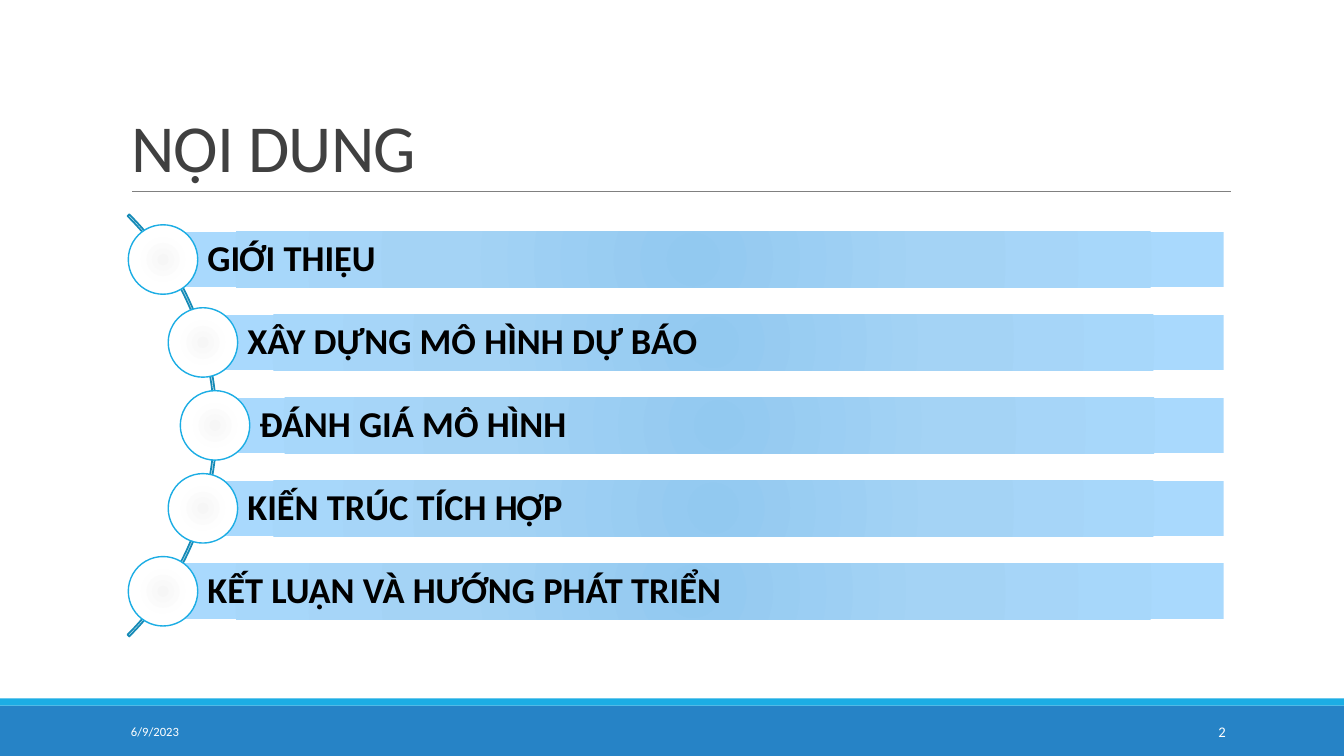
from math import sqrt
from pptx import Presentation
from pptx import util as u
from pptx.dml.color import RGBColor
from pptx.enum import shapes, text
from pptx.oxml import parse_xml

# Content
TITLE = "NỘI DUNG"
ITEMS = [
    "GIỚI THIỆU",
    "XÂY DỰNG MÔ HÌNH DỰ BÁO",
    "ĐÁNH GIÁ MÔ HÌNH",
    "KIẾN TRÚC TÍCH HỢP",
    "KẾT LUẬN VÀ HƯỚNG PHÁT TRIỂN",
]
DATE, PAGE = "6/9/2023", "2"

# Colours and measures in cm
FONT = "Calibri"
BAR = [(0, "92C9F0"), (45, "A4D3F5"), (100, "A9D9FD")]
DOT = [(0, "F6F6F6"), (45, "FEFEFE"), (100, "FFFFFF")]
WIDE, HIGH = 33.87, 19.05
MID_X, MID_Y = 5.42, 10.72      # centre of the middle dot
STEP, BEND = 2.09, 7.32         # row pitch, radius the dots follow
BAR_H, BAR_END, DOT_D = 1.4, 30.84, 1.75
ARC_D = 15.04

NS = 'xmlns:a="http://schemas.openxmlformats.org/drawingml/2006/main"'
KIND = shapes.MSO_SHAPE
ALIGN, ANCHOR = text.PP_ALIGN, text.MSO_ANCHOR


def color(code):
    return RGBColor.from_string(code)


def box(x, y, w, h):
    return [u.Cm(v) for v in (x, y, w, h)]


def glow(shape, stops):
    """Fill a shape with a gradient that spreads from its centre."""
    marks = "".join(f'<a:gs pos="{pos * 1000}"><a:srgbClr val="{code}"/></a:gs>'
                    for pos, code in stops)
    fill = parse_xml(
        f'<a:gradFill {NS} rotWithShape="1"><a:gsLst>{marks}</a:gsLst>'
        '<a:path path="circle"><a:fillToRect l="100000" t="100000" '
        'r="100000" b="100000"/></a:path></a:gradFill>')
    shape._element.spPr.prstGeom.addnext(fill)


def draw(slide, kind, area, fill=None, line=None, width=1):
    shape = slide.shapes.add_shape(kind, *box(*area))
    shape.shadow.inherit = False
    if isinstance(fill, list):
        glow(shape, fill)
    elif fill:
        shape.fill.solid()
        shape.fill.fore_color.rgb = color(fill)
    else:
        shape.fill.background()
    if line:
        shape.line.color.rgb = color(line)
        shape.line.width = u.Pt(width)
    else:
        shape.line.fill.background()
    return shape


def write(shape, words, size, code, bold=False, align=ALIGN.LEFT,
          anchor=ANCHOR.MIDDLE, lead=1.0):
    frame = shape.text_frame
    frame.text = words
    frame.word_wrap = True
    frame.auto_size = text.MSO_AUTO_SIZE.NONE
    frame.vertical_anchor = anchor
    para = frame.paragraphs[0]
    para.alignment, para.line_spacing = align, lead
    font = para.runs[0].font
    font.name, font.size, font.bold = FONT, u.Pt(size), bold
    font.color.rgb = color(code)
    return para.runs[0]


def frame_slide(slide):
    # Bottom bands
    draw(slide, KIND.RECTANGLE, (0, 17.78, WIDE, 1.27), "2683C6")
    draw(slide, KIND.RECTANGLE, (0, 17.6, WIDE, 0.18), "1CADE4")

    # Title and rule
    title = slide.shapes.title
    title.left, title.top, title.width, title.height = box(3.05, 0.79, 27.94, 4.04)
    run = write(title, TITLE, 48, "404040", anchor=ANCHOR.BOTTOM, lead=0.85)
    run.font._element.set("spc", "-50")
    rule = slide.shapes.add_connector(shapes.MSO_CONNECTOR.STRAIGHT,
                                      *box(3.33, 4.83, 31.01, 4.83))
    rule.line.color.rgb = color("808080")
    rule.line.width = u.Pt(0.5)
    rule._element.spPr.append(parse_xml(f"<a:effectLst {NS}/>"))

    # Date and page number
    for words, size, x, w, align in [(PAGE, 10.5, 27.51, 3.63, ALIGN.RIGHT),
                                     (DATE, 9, 3.05, 6.86, ALIGN.LEFT)]:
        note = slide.shapes.add_textbox(*box(x, 17.93, w, 1.02))
        write(note, words, size, "FFFFFF", align=align)


def list_items(slide):
    # Arc behind the dots
    arc = draw(slide, KIND.BLOCK_ARC,
               (MID_X + 0.04 - ARC_D, MID_Y - ARC_D / 2, ARC_D, ARC_D),
               line="168BB7", width=1.25)
    for i, value in enumerate((189, 27, 0.004)):
        arc.adjustments[i] = value

    # Bars start at the centre of their dots, which sit on a circle
    for i, words in enumerate(ITEMS):
        drop = (i - (len(ITEMS) - 1) / 2) * STEP
        x = MID_X - BEND + sqrt(BEND ** 2 - drop ** 2)
        y = MID_Y + drop
        bar = draw(slide, KIND.RECTANGLE,
                   (x, y - BAR_H / 2, BAR_END - x, BAR_H), BAR)
        write(bar, words, 26, "000000", bold=True, lead=0.9)
        edge = bar.text_frame
        edge.margin_left = u.Cm(1.12)
        edge.margin_right = edge.margin_top = edge.margin_bottom = u.Cm(0.18)
        draw(slide, KIND.OVAL, (x - DOT_D / 2, y - DOT_D / 2, DOT_D, DOT_D),
             DOT, "1CADE4")


def main():
    deck = Presentation()
    deck.slide_width, deck.slide_height = u.Cm(WIDE), u.Cm(HIGH)
    slide = deck.slides.add_slide(deck.slide_layouts[5])
    frame_slide(slide)
    list_items(slide)
    deck.save("out.pptx")


if __name__ == "__main__":
    main()
